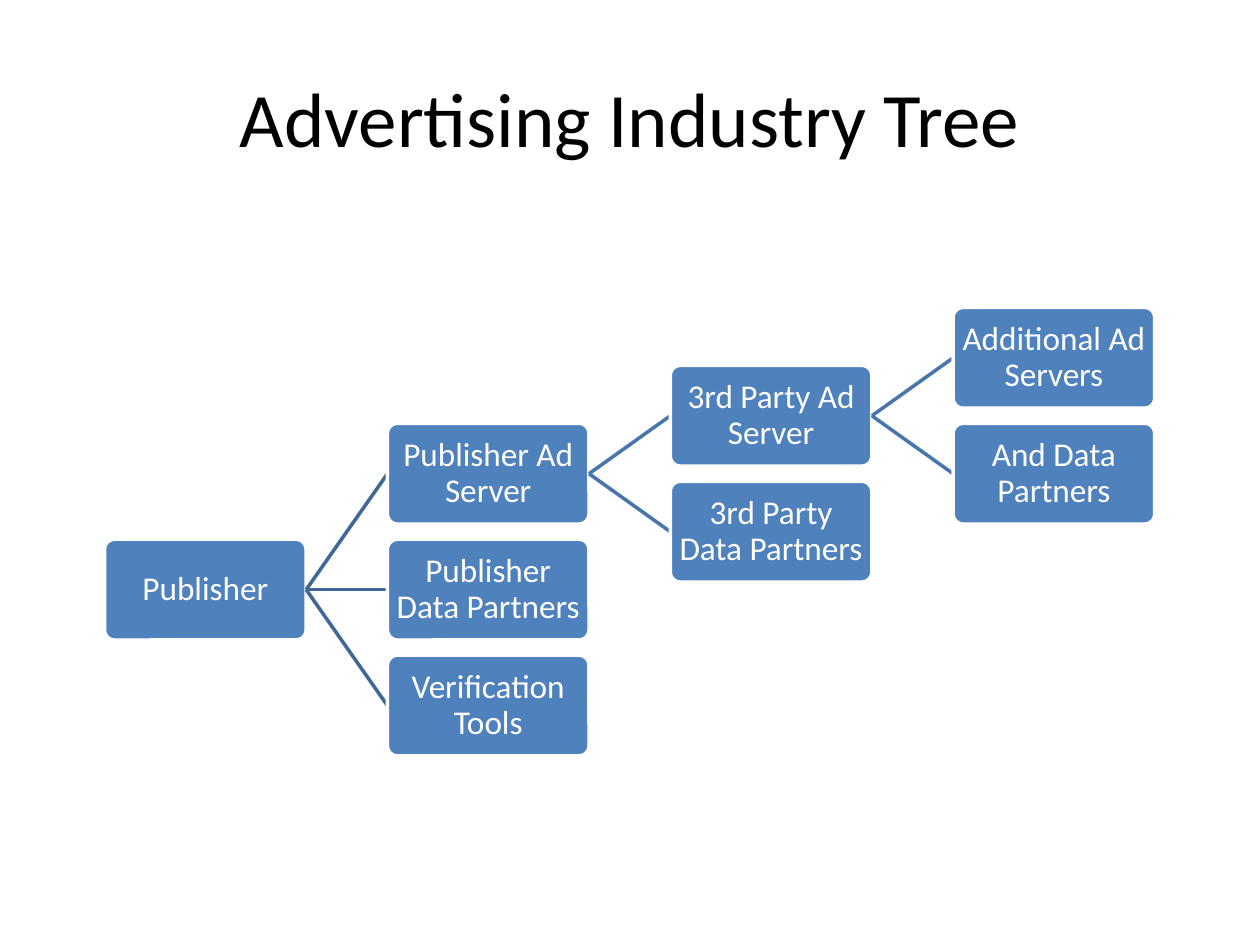
from lxml import etree
from pptx import Presentation
from pptx.dml.color import RGBColor
from pptx.enum.shapes import MSO_CONNECTOR, MSO_SHAPE
from pptx.enum.text import MSO_ANCHOR, PP_ALIGN
from pptx.oxml.ns import qn
from pptx.util import Inches, Pt

ROUNDED = MSO_SHAPE.ROUNDED_RECTANGLE
STRAIGHT = MSO_CONNECTOR.STRAIGHT
MIDDLE = MSO_ANCHOR.MIDDLE
CENTER = PP_ALIGN.CENTER

# Content: each node is (label, children)
TITLE = "Advertising Industry Tree"
TREE = ("Publisher", [
    ("Publisher Ad Server", [
        ("3rd Party Ad Server", [
            ("Additional Ad Servers", []),
            ("And Data Partners", []),
        ]),
        ("3rd Party Data Partners", []),
    ]),
    ("Publisher Data Partners", []),
    ("Verification Tools", []),
])

# Layout in inches
ROOT_LEFT, ROOT_MIDDLE = 0.83, 4.68
BOX_WIDTH, BOX_HEIGHT = 1.6, 0.8
COLUMN_STEP, ROW_STEP = 2.245, 0.92
TEXT_INSET = 0.03

FONT = "Calibri"
BOX_COLOR, WHITE, BLACK = "4F81BD", "FFFFFF", "000000"
LINK_COLORS = ["3F6797", "4875AC", "4875AC"]  # by depth of the parent


def color(hex_string):
    return RGBColor.from_string(hex_string)


def write(shape, text, size, text_color):
    frame = shape.text_frame
    frame.word_wrap = True
    frame.vertical_anchor = MIDDLE
    paragraph = frame.paragraphs[0]
    paragraph.text = text
    paragraph.alignment = CENTER
    paragraph.font.name = FONT
    paragraph.font.size = Pt(size)
    paragraph.font.color.rgb = color(text_color)
    return frame


def add_box(slide, label, left, middle):
    shape = slide.shapes.add_shape(
        ROUNDED, Inches(left), Inches(middle - BOX_HEIGHT / 2),
        Inches(BOX_WIDTH), Inches(BOX_HEIGHT))
    shape.adjustments[0] = 0.1
    shape.shadow.inherit = False
    shape.fill.solid()
    shape.fill.fore_color.rgb = color(BOX_COLOR)
    shape.line.color.rgb = color(WHITE)
    shape.line.width = Pt(2)
    frame = write(shape, label, 19, WHITE)
    frame.margin_left = frame.margin_right = Inches(TEXT_INSET)
    frame.margin_top = frame.margin_bottom = Inches(TEXT_INSET)
    frame.paragraphs[0].line_spacing = 0.9


def add_link(slide, left, start_y, right, end_y, link_color):
    connector = slide.shapes.add_connector(
        STRAIGHT, Inches(left), Inches(start_y), Inches(right), Inches(end_y))
    connector.line.color.rgb = color(link_color)
    connector.line.width = Pt(2)
    etree.SubElement(connector._element.spPr, qn("a:effectLst"))


def add_branch(slide, node, middle, depth=0):
    """Draw a node, then its children centred on it one column to the right."""
    label, children = node
    left = ROOT_LEFT + depth * COLUMN_STEP
    add_box(slide, label, left, middle)
    for index, child in enumerate(children):
        child_middle = middle + (index - (len(children) - 1) / 2) * ROW_STEP
        add_link(slide, left + BOX_WIDTH, middle, left + COLUMN_STEP,
                 child_middle, LINK_COLORS[depth])
        add_branch(slide, child, child_middle, depth + 1)


def main():
    presentation = Presentation()
    presentation.slide_width = Inches(10)
    presentation.slide_height = Inches(7.5)
    slide = presentation.slides.add_slide(presentation.slide_layouts[6])

    # Title
    title = slide.shapes.add_textbox(
        Inches(0.5), Inches(0.3), Inches(9), Inches(1.25))
    write(title, TITLE, 44, BLACK)

    # Tree
    add_branch(slide, TREE, ROOT_MIDDLE)
    presentation.save("out.pptx")


if __name__ == "__main__":
    main()
